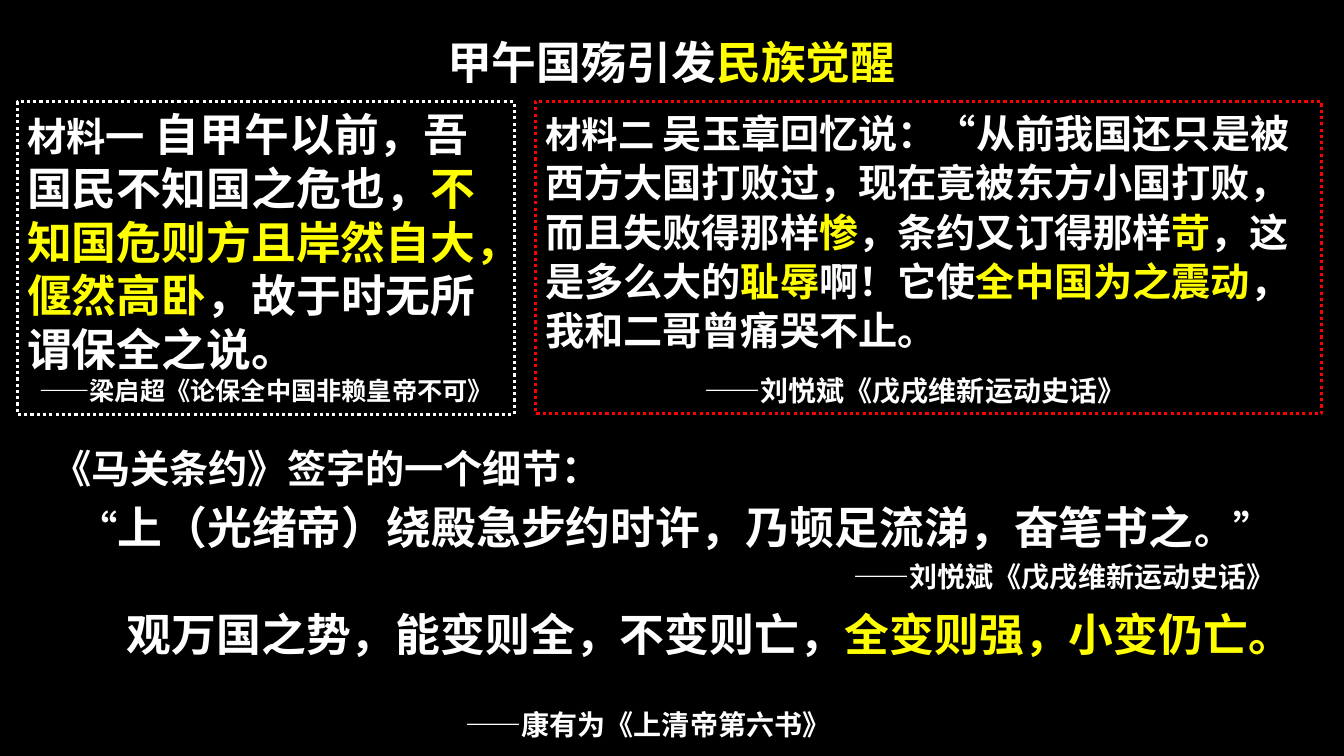
from lxml.etree import SubElement
from pptx import Presentation
from pptx.dml.color import RGBColor
from pptx.enum.dml import MSO_LINE
from pptx.enum.shapes import MSO_SHAPE
from pptx.enum.text import MSO_ANCHOR, MSO_AUTO_SIZE, PP_ALIGN
from pptx.oxml.ns import qn
from pptx.util import Inches, Pt

WIDTH, HEIGHT = Inches(13.33), Inches(7.5)
WHITE, YELLOW, RED, BLACK = "FFFFFF", "FFFF00", "FF0000", "000000"
CJK_FONT = "Noto Sans CJK SC"
SOURCE_TOP = 13.47


def color(hex_string):
    return RGBColor.from_string(hex_string)


def area(left, top, width, height):
    """Turn percentages of the slide into left, top, width and height."""
    return [int(share * full / 100) for share, full in
            ((left, WIDTH), (top, HEIGHT), (width, WIDTH), (height, HEIGHT))]


def add_span(para, text, size, hex_string=WHITE, latin=CJK_FONT):
    span = para.add_run()
    span.text = text
    font = span.font
    font.size, font.bold, font.name = Pt(size), True, latin
    font.color.rgb = color(hex_string)
    SubElement(font._element, qn("a:ea")).set("typeface", CJK_FONT)


def fill_paragraph(para, spans, indent=0, before=0, spacing=1.0,
                   align=PP_ALIGN.LEFT, latin=CJK_FONT):
    """Format a paragraph; indent is the first-line offset in inches."""
    para.alignment = align
    para.space_before, para.line_spacing = Pt(before), spacing
    properties = para._p.get_or_add_pPr()
    properties.set("marL", "0")
    properties.set("indent", str(Inches(indent)))
    for span in spans:
        add_span(para, *span, latin=latin)


def fill_frame(frame, paragraphs, anchor=MSO_ANCHOR.TOP):
    frame.word_wrap = True
    frame.auto_size = MSO_AUTO_SIZE.NONE
    frame.vertical_anchor = anchor
    for index, (spans, layout) in enumerate(paragraphs):
        para = frame.add_paragraph() if index else frame.paragraphs[0]
        fill_paragraph(para, spans, **layout)


def add_source_box(slide, place, border, paragraphs):
    box = slide.shapes.add_shape(MSO_SHAPE.RECTANGLE, *area(*place))
    box.shadow.inherit = False
    box.fill.background()
    box.line.color.rgb = color(border)
    box.line.width = Pt(2.25)
    box.line.dash_style = MSO_LINE.ROUND_DOT
    fill_frame(box.text_frame, paragraphs)


def add_text(slide, place, paragraphs):
    fill_frame(slide.shapes.add_textbox(*area(*place)).text_frame, paragraphs)


def set_title(slide, place, spans):
    title = slide.shapes.title
    title.left, title.top, title.width, title.height = area(*place)
    layout = dict(spacing=0.9, align=PP_ALIGN.CENTER, latin="Calibri")
    fill_frame(title.text_frame, [(spans, layout)], MSO_ANCHOR.MIDDLE)


def main():
    deck = Presentation()
    deck.slide_width, deck.slide_height = WIDTH, HEIGHT
    slide = deck.slides.add_slide(deck.slide_layouts[5])
    slide.background.fill.solid()
    slide.background.fill.fore_color.rgb = color(BLACK)

    set_title(slide, (30.83, 2, 38.26, 13.07),
              [("甲午国殇引发", 32), ("民族觉醒", 32, YELLOW)])

    add_source_box(slide, (1.28, SOURCE_TOP, 36.98, 41.33), WHITE, [
        ([("材料一", 28),
          (" 自甲午以前，吾国民不知国之危也，", 32),
          ("不知国危则方且岸然自大，偃然高卧", 32, YELLOW),
          ("，故于时无所谓保全之说。", 32)], {}),
        ([("——梁启超《论保全中国非赖皇帝不可》", 18)], dict(indent=0.12)),
    ])

    book = ("——刘悦斌《戊戌维新运动史话》", 20)
    add_source_box(slide, (39.83, SOURCE_TOP, 58.51, 41.2), RED, [
        ([("材料二 ", 26),
          ("吴玉章回忆说：“从前我国还只是被西方大国打败过，"
           "现在竟被东方小国打败，而且失败得那样", 28),
          ("惨", 28, YELLOW), ("，条约又订得那样", 28),
          ("苛", 28, YELLOW), ("，这是多么大的", 28),
          ("耻辱", 28, YELLOW), ("啊！它使", 28),
          ("全中国为之震动", 28, YELLOW), ("，我和二哥曾痛哭不止。", 28)],
         dict(before=10, spacing=1.05)),
        ([book], dict(indent=1.58, before=13, spacing=1.05)),
    ])

    add_text(slide, (3.15, 58.13, 92.42, 22.27), [
        ([("《马关条约》签字的一个细节：", 28)], dict(before=6)),
        ([("“", 28), ("上（光绪帝）绕殿急步约时许，乃顿足流涕，奋笔书之", 32),
          ("。”", 28)], dict(indent=0.26, before=6)),
        ([book], dict(before=4, align=PP_ALIGN.RIGHT)),
    ])

    add_text(slide, (8.7, 80.4, 86.87, 13.47), [
        ([("观万国之势，能变则全，不变则亡，", 32),
          ("全变则强，小变仍亡。", 32, YELLOW)], dict(spacing=0.9)),
        ([("——康有为《上清帝第六书》", 20)],
         dict(indent=3.36, before=36, spacing=0.9)),
    ])
    deck.save("out.pptx")


if __name__ == "__main__":
    main()
